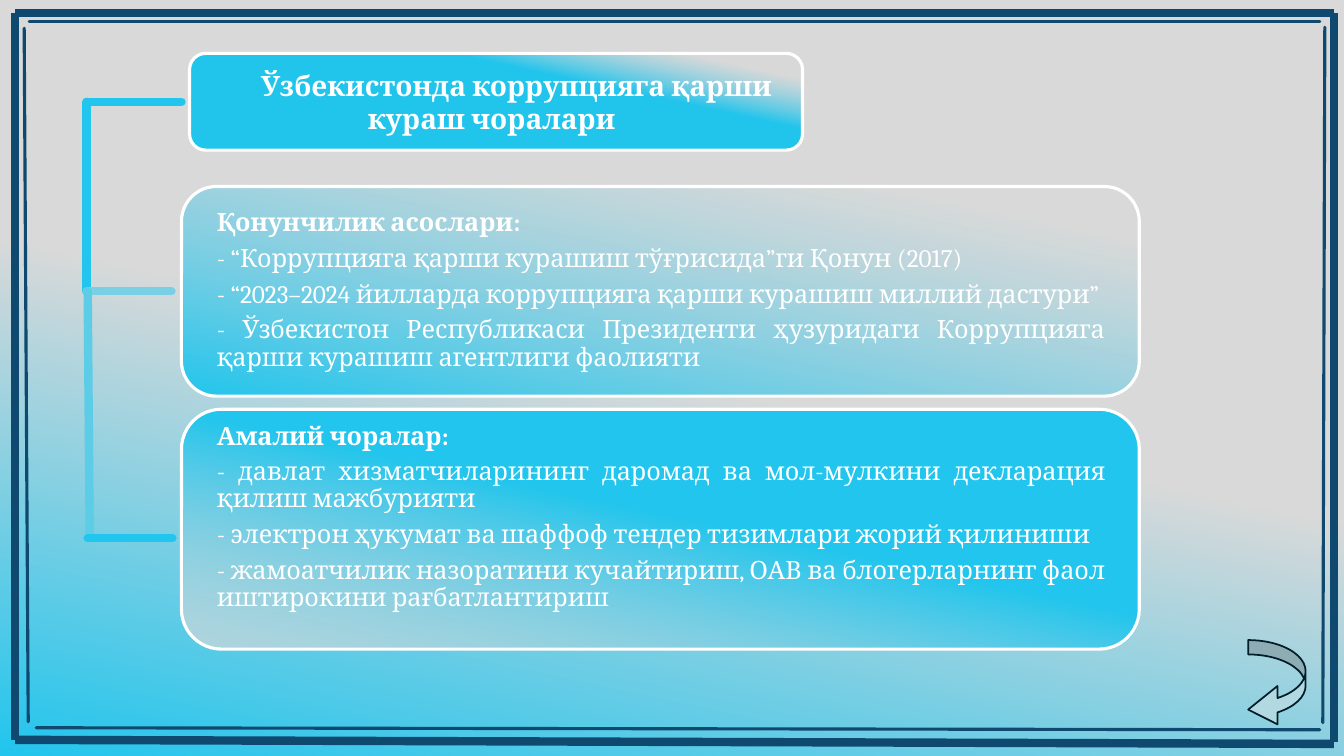
from lxml import etree
from pptx import Presentation
from pptx.dml.color import RGBColor
from pptx.enum.shapes import MSO_CONNECTOR, MSO_SHAPE
from pptx.enum.text import MSO_ANCHOR, MSO_AUTO_SIZE, PP_ALIGN
from pptx.oxml.ns import qn
from pptx.util import Inches, Pt

STRAIGHT = MSO_CONNECTOR.STRAIGHT
ROUNDED, CURVED = MSO_SHAPE.ROUNDED_RECTANGLE, MSO_SHAPE.CURVED_RIGHT_ARROW
MIDDLE, NO_FIT = MSO_ANCHOR.MIDDLE, MSO_AUTO_SIZE.NONE
CENTER, JUSTIFY = PP_ALIGN.CENTER, PP_ALIGN.JUSTIFY
LEFT_SIDE = 1

NAVY, CYAN, GRAY, WHITE = "0F496F", "22C5ED", "D9D9D9", "FFFFFF"
ANGLE = 102
GRAY_ALPHA = 65

TITLE = "Ўзбекистонда коррупцияга қарши кураш чоралари"
LEGAL = [
    "Қонунчилик асослари:",
    "- “Коррупцияга қарши курашиш тўғрисида”ги Қонун (2017)",
    "- “2023–2024 йилларда коррупцияга қарши курашиш миллий дастури”",
    "- Ўзбекистон Республикаси Президенти ҳузуридаги Коррупцияга қарши "
    "курашиш агентлиги фаолияти",
]
PRACTICE = [
    "Амалий чоралар:",
    "- давлат хизматчиларининг даромад ва мол-мулкини декларация қилиш мажбурияти",
    "- электрон ҳукумат ва шаффоф тендер тизимлари жорий қилиниши",
    "- жамоатчилик назоратини кучайтириш, ОАВ ва блогерларнинг фаол "
    "иштирокини рағбатлантириш",
]
OUTER_FRAME = [
    (0.15, 0.13, 0.15, 7.34), (13.23, 0.13, 13.23, 7.36),
    (13.23, 7.38, 0.15, 7.34), (13.23, 0.13, 0.15, 0.13),
]
INNER_FRAME = [
    (0.24, 0.28, 0.28, 7.16), (13.14, 0.27, 13.12, 7.17),
    (13.09, 7.24, 0.36, 7.22), (13.09, 0.21, 0.29, 0.21),
]
TREE = [
    ((0.86, 2.89, 0.86, 1.01), CYAN),
    ((1.7, 2.89, 0.86, 2.89), "79CFE3"),
    ((0.89, 5.34, 0.87, 2.89), "5DCCE7"),
    ((1.71, 5.34, 0.87, 5.34), CYAN),
]


def rgb(color):
    return RGBColor.from_string(color)


def assign(target, values):
    for name, value in values.items():
        setattr(target, name, value)


class Slide:
    text_frame = {
        "word_wrap": True, "auto_size": NO_FIT, "vertical_anchor": MIDDLE,
        "margin_left": Inches(0.28), "margin_right": Inches(0.28),
        "margin_top": 0, "margin_bottom": 0,
    }
    title_par = {"alignment": CENTER, "line_spacing": 1.0,
                 "space_before": Pt(0), "space_after": Pt(8)}
    body_par = {"alignment": JUSTIFY, "line_spacing": 0.9,
                "space_before": Pt(0), "space_after": Pt(6)}

    def __init__(self, prs, layout):
        self.s = prs.slides.add_slide(prs.slide_layouts[layout])

    def gradient(self, fill, owner, stops):
        """Fill with (position, colour) stops; gray stops are translucent."""
        fill.gradient()
        grad = next(owner.iter(qn("a:gradFill")))
        stop_list = grad.find(qn("a:gsLst"))
        for old in list(stop_list):
            stop_list.remove(old)
        for position, color in stops:
            gs = etree.SubElement(stop_list, qn("a:gs"), pos=str(position * 1000))
            clr = etree.SubElement(gs, qn("a:srgbClr"), val=color)
            if color == GRAY:
                etree.SubElement(clr, qn("a:alpha"), val=str(GRAY_ALPHA * 1000))
        grad.find(qn("a:lin")).set("ang", str(ANGLE * 60000))

    def background(self, stops):
        self.gradient(self.s.background.fill, self.s.element, stops)

    def line(self, ends, color, width, cap="flat"):
        c = self.s.shapes.add_connector(STRAIGHT, *map(Inches, ends))
        c.line.color.rgb = rgb(color)
        c.line.width = Pt(width)
        c.line._get_or_add_ln().set("cap", cap)
        etree.SubElement(c._element.spPr, qn("a:effectLst"))
        return c

    def shape(self, kind, box, color, width):
        sp = self.s.shapes.add_shape(kind, *map(Inches, box))
        sp.shadow.inherit = False
        sp.line.color.rgb = rgb(color)
        sp.line.width = Pt(width)
        return sp

    def card(self, box, stops):
        sp = self.shape(ROUNDED, box, WHITE, 2.25)
        self.gradient(sp.fill, sp._element, stops)

    def text(self, idx, box, lines, size, par, indent=0):
        """Move a placeholder to the front and fill it; its first line is bold."""
        ph = self.s.placeholders[idx]
        self.s.shapes._spTree.append(ph._element)
        assign(ph, dict(zip(("left", "top", "width", "height"), map(Inches, box))))
        tf = ph.text_frame
        assign(tf, self.text_frame)
        for i, line in enumerate(lines):
            p = tf.paragraphs[0] if i == 0 else tf.add_paragraph()
            assign(p, par)
            pPr = p._p.get_or_add_pPr()
            pPr.set("marL", "0")
            pPr.set("indent", str(Inches(indent)))
            etree.SubElement(pPr, qn("a:buNone"))
            r = p.add_run()
            r.text = line
            assign(r.font, {"name": "Cambria", "size": Pt(size), "bold": i == 0})
            r.font.color.rgb = rgb(WHITE)
        return ph

    def return_arrow(self, box):
        sp = self.shape(CURVED, box, "021E2B", 1.25)
        sp.fill.solid()
        sp.fill.fore_color.rgb = rgb("B2D8E1")
        for i, value in enumerate((0.25, 0.668, 0.511)):
            sp.adjustments[i] = value
        sp._element.spPr.find(qn("a:xfrm")).set("flipH", "1")


def main():
    prs = Presentation()
    prs.slide_width, prs.slide_height = Inches(13.33), Inches(7.5)
    slide = Slide(prs, 3)
    slide.background([(50, GRAY), (100, CYAN)])
    for ends in OUTER_FRAME:
        slide.line(ends, NAVY, 6)
    for ends in INNER_FRAME:
        slide.line(ends, NAVY, 2.25, "rnd")

    slide.card((1.88, 0.53, 6.08, 0.96), [(11, GRAY), (33, CYAN)])
    title = slide.text(0, (1.8, 0.61, 6.15, 0.8), [TITLE], 20, slide.title_par, 0.49)
    slide.card((1.8, 1.85, 9.5, 2.08), [(13, GRAY), (100, CYAN)])
    slide.text(1, (1.87, 1.88, 9.37, 2.01), LEGAL, 18, slide.body_par)
    slide.card((1.8, 4.06, 9.5, 2.38), [(46, CYAN), (97, GRAY)])
    slide.text(2, (1.87, 4.06, 9.37, 2.15), PRACTICE, 18, slide.body_par)

    branch = slide.line((1.8, 1.01, 0.87, 1.01), CYAN, 6, "rnd")
    branch.begin_connect(title, LEFT_SIDE)
    for ends, color in TREE:
        slide.line(ends, color, 6, "rnd")
    slide.return_arrow((12.38, 6.35, 0.57, 0.88))
    prs.save("out.pptx")


if __name__ == "__main__":
    main()
